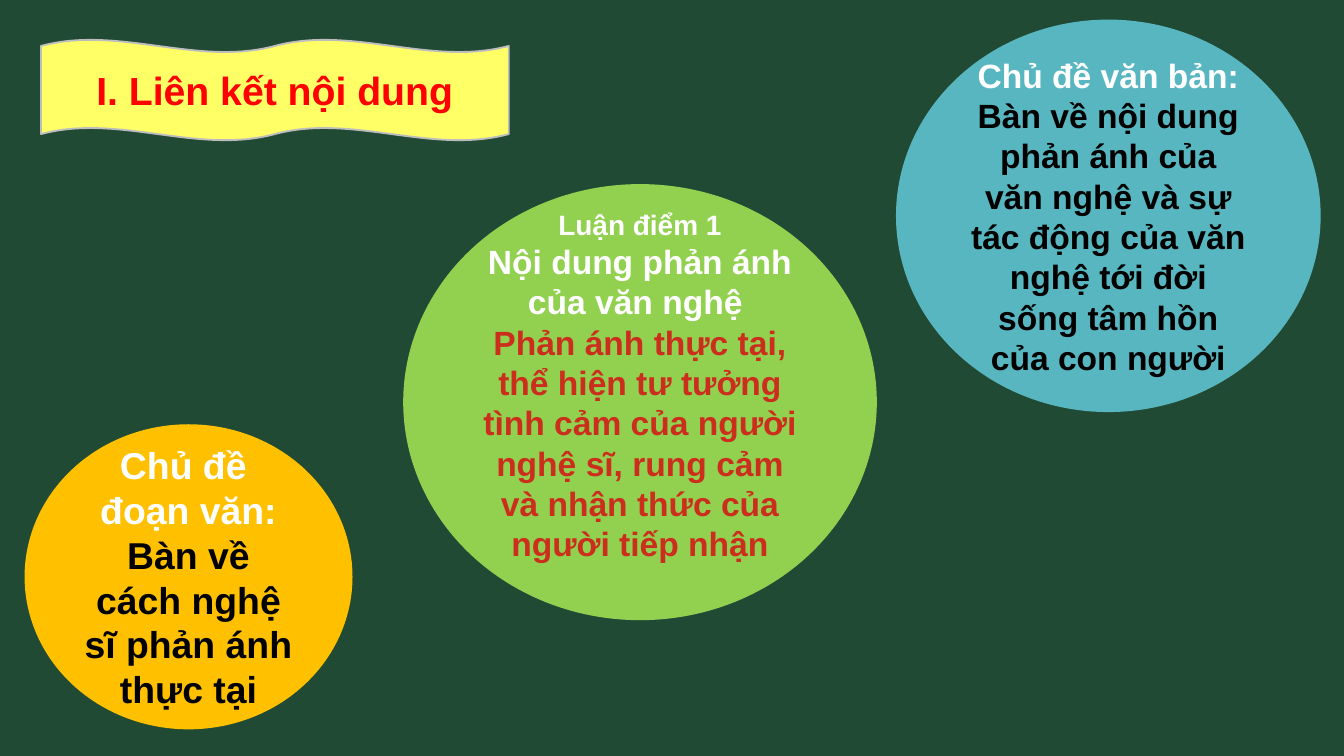
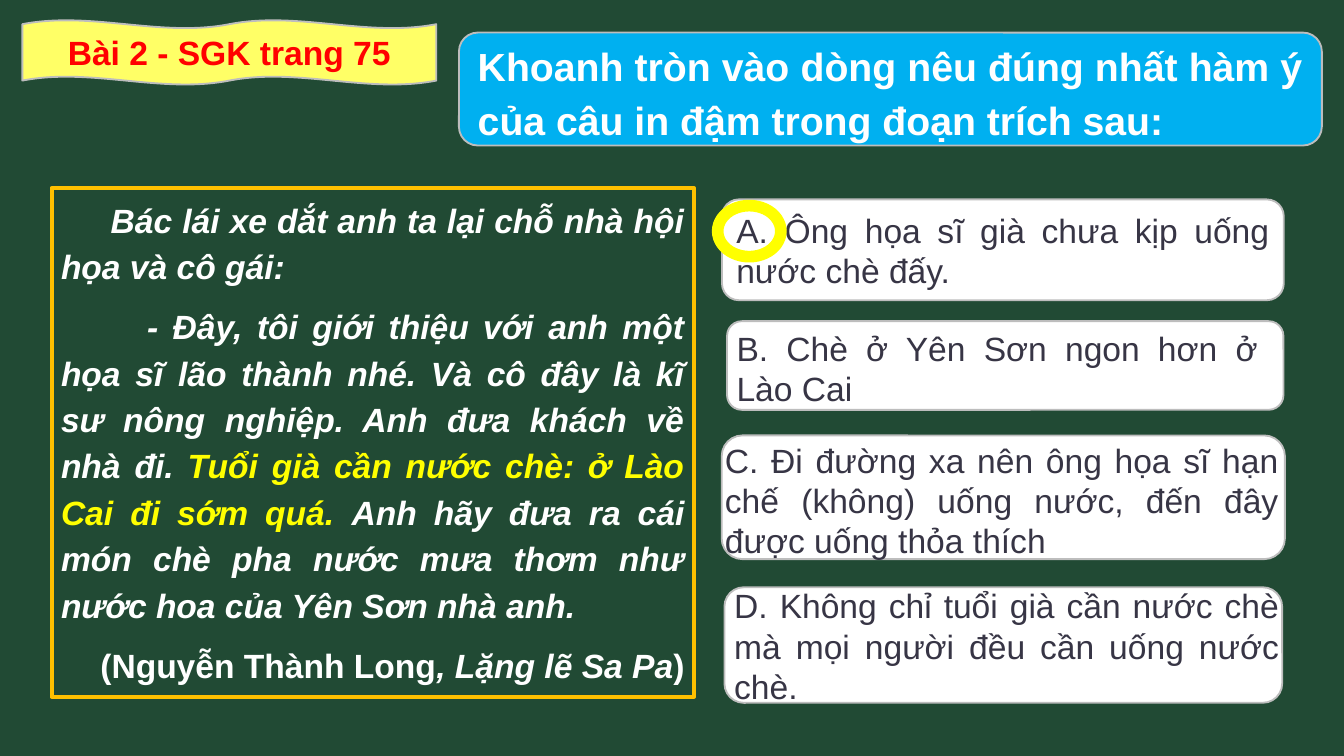
"""Builds two Vietnamese lesson slides: linked content and an implied-meaning quiz."""
from pptx import Presentation
from pptx.dml.color import RGBColor
from pptx.enum.shapes import MSO_SHAPE as Kind
from pptx.enum.text import MSO_ANCHOR as Anchor, MSO_AUTO_SIZE as Auto, PP_ALIGN as Align
from pptx.util import Inches, Pt

deck = Presentation()
deck.slide_width = Inches(10)
deck.slide_height = deck.slide_width * 9 // 16
cell = deck.slide_width / 100

BOARD, WHITE, BLACK, RED = "214A34", "FFFFFF", "000000", "FF0000"
GOLD, YELLOW, CREAM, GREY, SLATE = "FFC000", "FFFF00", "FFFF66", "BDBDBD", "373545"
EDGE = (GREY, 1)
TIGHT = dict(margin_left=Inches(0.07), margin_right=Inches(0.07),
             margin_top=Inches(0.04), margin_bottom=Inches(0.04))
MID = dict(vertical_anchor=Anchor.MIDDLE)
TOP = dict(vertical_anchor=Anchor.TOP, auto_size=Auto.SHAPE_TO_FIT_TEXT)
CENTER = dict(alignment=Align.CENTER)
JUST = dict(alignment=Align.JUSTIFY)
LOOSE = dict(line_spacing=1.15, space_after=Pt(7.5))


def paint(fill, tone):
    """Fill with a hex colour, or with nothing."""
    if tone:
        fill.solid()
        fill.fore_color.rgb = RGBColor.from_string(tone)
    else:
        fill.background()


def draw(page, kind, box, tone=None, edge=None, paras=(), frame=MID, bold=True):
    """Place a shape or text box in grid cells; paras hold (format, indent, runs)."""
    spot = [round(n * cell) for n in box]
    if kind:
        shape = page.shapes.add_shape(kind, *spot)
        shape.shadow.inherit = False
        paint(shape.fill, tone)
        paint(shape.line.fill, edge and edge[0])
        if edge:
            shape.line.width = Pt(edge[1])
    else:
        shape = page.shapes.add_textbox(*spot)
    text = shape.text_frame
    text.word_wrap = True
    for name, value in frame.items():
        setattr(text, name, value)
    for i, (form, indent, runs) in enumerate(paras):
        para = text.add_paragraph() if i else text.paragraphs[0]
        for name, value in form.items():
            setattr(para, name, value)
        if indent:
            para._p.get_or_add_pPr().set("indent", str(Inches(indent)))
        for words, size, ink, slant in runs:
            run = para.add_run()
            run.text = words
            look = dict(name="Arial", size=Pt(size), bold=bold, italic=slant)
            for name, value in look.items():
                setattr(run.font, name, value)
            paint(run.font.fill, ink)


theme, quiz = [deck.slides.add_slide(deck.slide_layouts[6]) for _ in range(2)]
for page in (theme, quiz):
    paint(page.background.fill, BOARD)

circles = [
    ((1.83, 31.57, 24.4, 22.7), GOLD, 0.04, [
        [("Chủ đề ", 20, WHITE, False)],
        [("đoạn văn: ", 20, WHITE, False),
         ("Bàn về cách nghệ sĩ phản ánh thực tại", 20, BLACK, False)]]),
    ((66.67, 1.46, 31.6, 29.2), "58B6C0", 0.04, [
        [("Chủ đề văn bản:", 18, WHITE, False)],
        [("Bàn về nội dung phản ánh của văn nghệ và sự tác động của văn nghệ "
          "tới đời sống tâm hồn của con người", 18, BLACK, False)]]),
    ((30, 13.7, 35.24, 32.45), "92D050", 0.29, [
        [("Luận điểm 1", 15, WHITE, False)],
        [("Nội dung phản ánh của văn nghệ ", 18, WHITE, False)],
        [("Phản ánh thực tại, thể hiện tư tưởng tình cảm của người nghệ sĩ, "
          "rung cảm và nhận thức của người tiếp nhận", 18, "CC2E1D", False)]]),
]
for box, tone, foot, lines in circles:
    draw(theme, Kind.OVAL, box, tone, None, [(CENTER, 0, runs) for runs in lines],
         {**MID, **TIGHT, "margin_bottom": Inches(foot)})

draw(quiz, Kind.RECTANGLE, (3.84, 14, 47.8, 37.84), None, (GOLD, 2.25), [
    ({**JUST, **LOOSE}, 0.37, [
        ("Bác lái xe dắt anh ta lại chỗ nhà hội họa và cô gái:", 18, WHITE, True)]),
    ({**JUST, **LOOSE}, 0.64, [
        ("- Đây, tôi giới thiệu với anh một họa sĩ lão thành nhé. Và cô đây là kĩ sư "
         "nông nghiệp. Anh đưa khách về nhà đi. ", 18, WHITE, True),
        ("Tuổi già cần nước chè: ở Lào Cai đi sớm quá. ", 18, YELLOW, True),
        ("Anh hãy đưa ra cái món chè pha nước mưa thơm như nước hoa của Yên Sơn "
         "nhà anh.", 18, WHITE, True)]),
    ({**LOOSE, "alignment": Align.RIGHT}, 0, [
        ("(Nguyễn Thành Long", 18, WHITE, False),
        (", Lặng lẽ Sa Pa", 18, WHITE, True),
        (")", 18, WHITE, False)]),
], {**TOP, **TIGHT})

answers = [
    ("A. Ông họa sĩ già chưa kịp uống nước chè đấy.", (53.72, 14.84, 41.8, 7.5), None),
    ("B. Chè ở Yên Sơn ngon hơn ở Lào Cai", (54.1, 23.9, 41.4, 6.6), (54.1, 24, 40.2, 6.8)),
    ("C. Đi đường xa nên ông họa sĩ hạn chế (không) uống nước, đến đây được uống thỏa thích",
     (53.7, 32.4, 41.9, 9.2), (53.24, 32.3, 42.6, 9.8)),
    ("D. Không chỉ tuổi già cần nước chè mà mọi người đều cần uống nước chè. ",
     (53.9, 43.7, 41.5, 8.6), (53.93, 43.14, 41.95, 9.8)),
]
texts = [[(JUST, 0, [(words, 18, SLATE, False)])] for words, _, _ in answers]
for paras, (_, card, label) in zip(texts, answers):
    draw(quiz, Kind.ROUNDED_RECTANGLE, card, WHITE, EDGE, () if label else paras,
         {**MID, **TIGHT}, False)
for paras, (_, _, label) in zip(texts, answers):
    if label:
        draw(quiz, None, label, paras=paras, frame={**TOP, **TIGHT}, bold=False)

draw(quiz, Kind.OVAL, (53.4, 15.3, 4.7, 3.8), None, (YELLOW, 6.25))

for page, title, size, box in [
    (theme, "I. Liên kết nội dung", 21, (3.05, 2.95, 34.8, 7.5)),
    (quiz, "Bài 2 - SGK trang 75", 18, (1.66, 1.5, 30.8, 4.8)),
]:
    draw(page, Kind.DOUBLE_WAVE, box, CREAM, EDGE, [(CENTER, 0, [(title, size, RED, False)])])

draw(quiz, Kind.ROUNDED_RECTANGLE, (34.15, 2.43, 64.2, 8.4), "00B0F0", EDGE, [
    ({**JUST, **LOOSE}, 0, [("Khoanh tròn vào dòng nêu đúng nhất hàm ý của câu in đậm "
                             "trong đoạn trích sau:", 21, WHITE, False)])])

deck.save("out.pptx")
